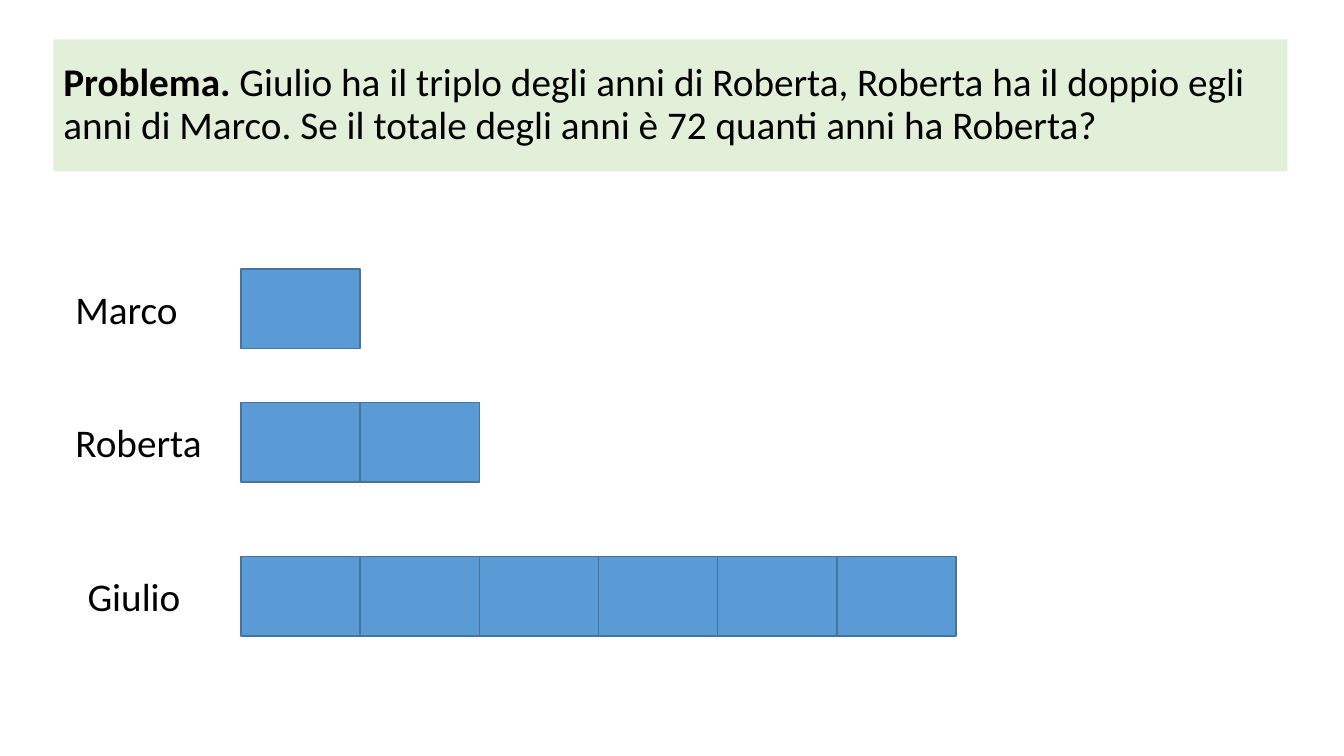
from dataclasses import dataclass

from pptx import Presentation
from pptx.dml.color import RGBColor
from pptx.enum.shapes import MSO_SHAPE
from pptx.enum.text import MSO_ANCHOR
from pptx.slide import Slide
from pptx.util import Inches, Pt

BLACK = RGBColor(0x00, 0x00, 0x00)
PALE_GREEN = RGBColor(0xE2, 0xF0, 0xD9)
BLUE = RGBColor(0x5B, 0x9B, 0xD5)
DARK_BLUE = RGBColor(0x43, 0x73, 0x9E)

UNIT_LEFT, UNIT_WIDTH, UNIT_HEIGHT = 2.39, 1.182, 0.79
LABEL_HEIGHT = 0.57


@dataclass(frozen=True)
class Person:
    name: str
    units: int
    bar_top: float
    name_left: float
    name_width: float


PEOPLE = [
    Person("Marco", 1, 2.67, 0.65, 1.23),
    Person("Roberta", 2, 3.99, 0.65, 1.47),
    Person("Giulio", 6, 5.52, 0.77, 1.13),
]


def add_text(slide: Slide, text: str, left: float, top: float, width: float,
             height: float, *, lead: str = "", fill: RGBColor | None = None,
             wrap: bool = False, line_spacing: float = 1.0,
             anchor: MSO_ANCHOR = MSO_ANCHOR.TOP) -> None:
    """Add a text box whose optional lead comes first, in bold."""
    box = slide.shapes.add_textbox(Inches(left), Inches(top), Inches(width), Inches(height))
    if fill is not None:
        box.fill.solid()
        box.fill.fore_color.rgb = fill
    frame = box.text_frame
    frame.word_wrap = wrap
    frame.vertical_anchor = anchor
    paragraph = frame.paragraphs[0]
    paragraph.line_spacing = line_spacing
    for part, bold in ((lead, True), (text, False)):
        if part:
            run = paragraph.add_run()
            run.text = part
            run.font.name = "Calibri"
            run.font.size = Pt(28)
            run.font.bold = bold
            run.font.color.rgb = BLACK


def add_unit(slide: Slide, left: float, top: float) -> None:
    unit = slide.shapes.add_shape(MSO_SHAPE.RECTANGLE, Inches(left), Inches(top),
                                  Inches(UNIT_WIDTH), Inches(UNIT_HEIGHT))
    unit.shadow.inherit = False
    unit.fill.solid()
    unit.fill.fore_color.rgb = BLUE
    unit.line.color.rgb = DARK_BLUE
    unit.line.width = Pt(1)


def add_person(slide: Slide, person: Person) -> None:
    """Draw a name, centred on its bar of equal units."""
    for index in range(person.units):
        add_unit(slide, UNIT_LEFT + index * UNIT_WIDTH, person.bar_top)
    name_top = person.bar_top + (UNIT_HEIGHT - LABEL_HEIGHT) / 2
    add_text(slide, person.name, person.name_left, name_top, person.name_width, LABEL_HEIGHT)


def main() -> None:
    presentation = Presentation()
    presentation.slide_width = Inches(13.33)
    presentation.slide_height = Inches(7.5)
    slide = presentation.slides.add_slide(presentation.slide_layouts[6])
    add_text(slide,
             "Giulio ha il triplo degli anni di Roberta, Roberta ha il doppio egli "
             "anni di Marco. Se il totale degli anni è 72 quanti anni ha Roberta?",
             0.53, 0.39, 12.24, 1.31, lead="Problema. ", fill=PALE_GREEN,
             wrap=True, line_spacing=0.9, anchor=MSO_ANCHOR.MIDDLE)
    for person in PEOPLE:
        add_person(slide, person)
    presentation.save("out.pptx")


if __name__ == "__main__":
    main()
